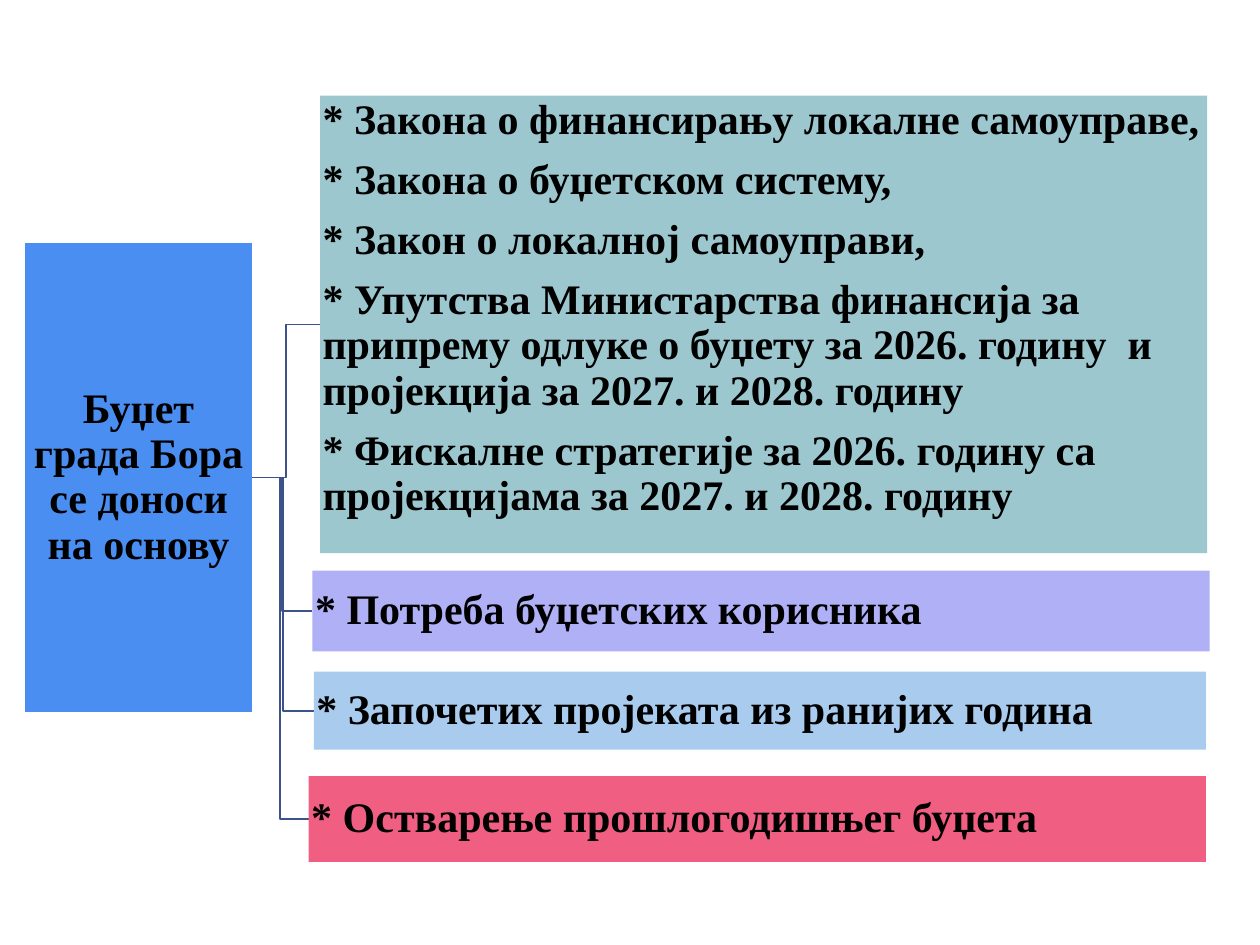
from lxml.etree import SubElement
from pptx import Presentation
from pptx.dml.color import RGBColor
from pptx.enum.shapes import MSO_SHAPE
from pptx.enum.text import MSO_ANCHOR as Anchor, MSO_AUTO_SIZE as AutoSize, PP_ALIGN as Align
from pptx.oxml.ns import qn
from pptx.util import Inches, Pt

BLACK = RGBColor(0x00, 0x00, 0x00)
BLUE = RGBColor(0x4A, 0x8E, 0xF2)
TEAL = RGBColor(0x9C, 0xC7, 0xCE)
LILAC = RGBColor(0xB0, 0xB0, 0xF6)
SKY = RGBColor(0xA9, 0xCC, 0xEE)
PINK = RGBColor(0xF0, 0x5E, 0x81)
BRANCH = RGBColor(0x3B, 0x52, 0x8A)

ROOT_BOX = (0.2, 1.93, 1.8, 3.72)
ROOT_TEXT = "Буџет града Бора се доноси на основу"
LAWS_BOX = (2.54, 0.76, 7.04, 3.63)
LAWS = [
    "* Закона о финансирању локалне самоуправе,",
    "* Закона о буџетском систему,",
    "* Закон о локалној самоуправи,",
    "* Упутства Министарства финансија за припрему одлуке о буџету "
    "за 2026. годину  и пројекција за 2027. и 2028. годину",
    "* Фискалне стратегије за 2026. годину са пројекцијама за 2027. и 2028. годину",
]
OTHER_GROUNDS = [
    ((2.48, 4.53, 7.12, 0.64), LILAC, "* Потреба буџетских корисника"),
    ((2.49, 5.33, 7.08, 0.62), SKY, "* Започетих пројеката из ранијих година"),
    ((2.45, 6.16, 7.12, 0.68), PINK, "* Остварење прошлогодишњег буџета"),
]


class HierarchySlide:
    font_name = "Times New Roman"
    font_size = Pt(24)
    inset = Inches(0.02)

    def __init__(self, slide):
        self.slide = slide

    def branch(self, start, end):
        """Draw an elbow line that turns halfway between two boxes."""
        left, top, width, height = start
        x1, y1 = left + width, top + height / 2
        x2, y2 = end[0], end[1] + end[3] / 2
        middle = (x1 + x2) / 2
        builder = self.slide.shapes.build_freeform(Inches(x1), Inches(y1))
        corners = [(middle, y1), (middle, y2), (x2, y2)]
        builder.add_line_segments([(Inches(x), Inches(y)) for x, y in corners], close=False)
        elbow = builder.convert_to_shape()
        elbow.fill.background()
        elbow.line.color.rgb = BRANCH
        elbow.line.width = Pt(1)
        elbow.shadow.inherit = False

    def placeholder(self, index, box, color, texts, align, anchor):
        holder = self.slide.placeholders[index]
        holder.left, holder.top, holder.width, holder.height = map(Inches, box)
        self.fill_box(holder, color, texts, align, anchor)

    def bar(self, box, color, text):
        bar = self.slide.shapes.add_shape(MSO_SHAPE.RECTANGLE, *map(Inches, box))
        bar.shadow.inherit = False
        self.fill_box(bar, color, [text], Align.LEFT, Anchor.MIDDLE)

    def fill_box(self, box, color, texts, align, anchor):
        box.fill.solid()
        box.fill.fore_color.rgb = color
        box.line.fill.background()
        frame = box.text_frame
        frame.word_wrap = True
        frame.auto_size = AutoSize.NONE
        frame.vertical_anchor = anchor
        frame.margin_left = frame.margin_right = self.inset
        frame.margin_top = frame.margin_bottom = self.inset
        for number, text in enumerate(texts):
            paragraph = frame.add_paragraph() if number else frame.paragraphs[0]
            self.fill_paragraph(paragraph, text, align)

    def fill_paragraph(self, paragraph, text, align):
        properties = paragraph._p.get_or_add_pPr()
        properties.set("marL", "0")
        properties.set("indent", "0")
        SubElement(properties, qn("a:buNone"))
        paragraph.alignment = align
        paragraph.line_spacing = 0.9
        paragraph.space_before = Pt(0)
        paragraph.space_after = Pt(8.4)
        run = paragraph.add_run()
        run.text = text
        run.font.name = self.font_name
        run.font.size = self.font_size
        run.font.bold = True
        run.font.color.rgb = BLACK


def main():
    deck = Presentation()
    deck.slide_width, deck.slide_height = Inches(10), Inches(7.5)
    title_and_content = deck.slide_layouts[1]
    budget = HierarchySlide(deck.slides.add_slide(title_and_content))

    budget.placeholder(0, ROOT_BOX, BLUE, [ROOT_TEXT], Align.CENTER, Anchor.MIDDLE)
    budget.placeholder(1, LAWS_BOX, TEAL, LAWS, Align.LEFT, Anchor.TOP)
    budget.branch(ROOT_BOX, LAWS_BOX)
    for box, color, text in OTHER_GROUNDS:
        budget.branch(ROOT_BOX, box)
        budget.bar(box, color, text)

    deck.save("out.pptx")


if __name__ == "__main__":
    main()
